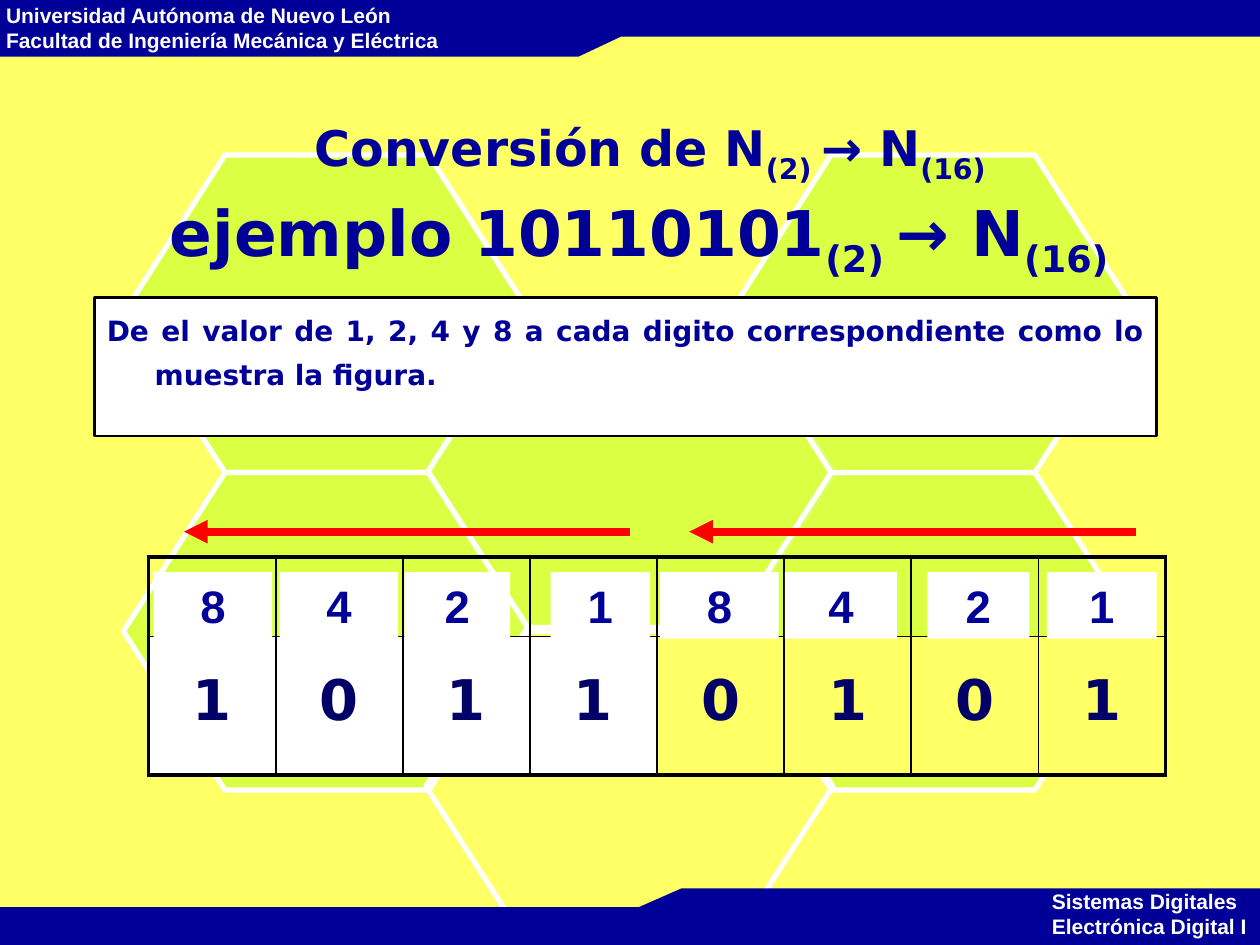
"""Build the slide on converting a binary number to hexadecimal."""
from lxml import etree
from pptx import Presentation
from pptx.dml.color import RGBColor
from pptx.enum.shapes import MSO_CONNECTOR, MSO_SHAPE
from pptx.enum.text import MSO_ANCHOR, PP_ALIGN
from pptx.oxml.ns import qn
from pptx.util import Inches, Pt

RECTANGLE, HEXAGON = MSO_SHAPE.RECTANGLE, MSO_SHAPE.HEXAGON
STRAIGHT = MSO_CONNECTOR.STRAIGHT
MIDDLE, TOP = MSO_ANCHOR.MIDDLE, MSO_ANCHOR.TOP
CENTER, LEFT, JUSTIFY = PP_ALIGN.CENTER, PP_ALIGN.LEFT, PP_ALIGN.JUSTIFY

COLORS = {"navy": "000099", "digit": "000066", "yellow": "FFFF66",
          "lime": "CCFF33", "white": "FFFFFF", "black": "000000", "red": "FF0000"}
HEADING_FONT, LABEL_FONT = "DejaVu Sans", "Arial"

HEADER_BAND = [(-0.01, 0.45), (-0.02, -0.03), (10, -0.02), (10, 0.29), (4.93, 0.29), (4.59, 0.45)]
FOOTER_BAND = [(10.01, 7.05), (10.02, 7.53), (0, 7.52), (0, 7.2), (5.07, 7.2), (5.41, 7.05)]
HEXAGONS = [(0.98, 1.23, "lime"), (3.39, 2.49, "lime"), (5.79, 3.75, "lime"),
            (5.79, 1.23, "lime"), (0.98, 3.75, "lime"), (3.38, 4.98, None)]
TITLE_LINES = [
    (28, [("Conversión de N", False), ("(2) ", True), ("→ N", False), ("(16)", True)]),
    (36, [("ejemplo 10110101", False), ("(2) ", True), ("→ N", False), ("(16)", True), (" ", False)]),
]
BITS = "10110101"
WEIGHTS = [("8", 1.22, 0.94), ("4", 2.22, 0.94), ("2", 3.21, 0.84), ("1", 4.37, 0.79),
           ("8", 5.24, 0.94), ("4", 6.23, 0.89), ("2", 7.36, 0.81), ("1", 8.31, 0.87)]


def rgb(name):
    """Return the named colour."""
    return RGBColor.from_string(COLORS[name])


def set_font(font, size, color, face):
    """Apply the bold style shared by all the text."""
    for attribute, value in {"size": Pt(size), "bold": True, "name": face}.items():
        setattr(font, attribute, value)
    font.color.rgb = rgb(color)


def paint(shape, fill=None, line=None, width=1):
    """Set fill and outline and drop the shadow."""
    shape.shadow.inherit = False
    if fill:
        shape.fill.solid()
        shape.fill.fore_color.rgb = rgb(fill)
    else:
        shape.fill.background()
    if line:
        shape.line.color.rgb = rgb(line)
        shape.line.width = Pt(width)
    else:
        shape.line.fill.background()


def write(frame, lines, size, color, face, align, spacing=1.0):
    """Write one paragraph per line."""
    for index, line in enumerate(lines):
        paragraph = frame.add_paragraph() if index else frame.paragraphs[0]
        paragraph.alignment = align
        paragraph.line_spacing = spacing
        run = paragraph.add_run()
        run.text = line
        set_font(run.font, size, color, face)


def add_band(slide, points):
    """Draw a stepped navy band."""
    corners = [(Inches(x), Inches(y)) for x, y in points]
    builder = slide.shapes.build_freeform(*corners[0])
    builder.add_line_segments(corners[1:], close=True)
    paint(builder.convert_to_shape(), "navy")


def add_band_label(slide, left, top, width, lines):
    """Place white text on a band."""
    label = slide.shapes.add_textbox(Inches(left), Inches(top), Inches(width), Inches(0.5))
    label.text_frame.word_wrap = False
    write(label.text_frame, lines, 12, "white", LABEL_FONT, LEFT)


def add_hexagon(slide, left, top, fill):
    """Draw one cell of the honeycomb."""
    cell = slide.shapes.add_shape(HEXAGON, Inches(left), Inches(top), Inches(3.23), Inches(2.52))
    cell.adjustments[0] = 0.32
    paint(cell, fill, "white", 3)
    if fill:
        color = cell.fill._xPr.find(qn("a:solidFill"))[0]
        etree.SubElement(color, qn("a:alpha"), val="70000")


def add_title(slide):
    """Fill the title placeholder and bring it in front of the honeycomb."""
    title = slide.shapes.title
    slide.shapes._spTree.append(title._element)
    title.left, title.top, title.width, title.height = map(Inches, (0.59, 0.84, 9.14, 1.42))
    title.text_frame.vertical_anchor = MIDDLE
    title.text_frame.word_wrap = True
    paragraph = title.text_frame.paragraphs[0]
    paragraph.alignment = CENTER
    paragraph.line_spacing = 1.1
    for index, (size, pieces) in enumerate(TITLE_LINES):
        if index:
            paragraph.add_line_break()
        for text, subscript in pieces:
            run = paragraph.add_run()
            run.text = text
            set_font(run.font, size, "navy", HEADING_FONT)
            if subscript:
                run.font._element.set("baseline", "-25000")


def add_box(slide, left, top, width, height, line=None):
    """Draw a white box and return its text frame."""
    box = slide.shapes.add_shape(RECTANGLE, *map(Inches, (left, top, width, height)))
    paint(box, "white", line, 1.5)
    box.text_frame.word_wrap = True
    box.text_frame.vertical_anchor = TOP
    return box.text_frame


def add_instruction(slide):
    """Add the framed instruction with a hanging indent."""
    frame = add_box(slide, 0.75, 2.36, 8.43, 1.1, "black")
    text = "De el valor de 1, 2, 4 y 8 a cada digito correspondiente como lo muestra la figura."
    write(frame, [text], 16, "navy", HEADING_FONT, JUSTIFY, 1.3)
    properties = frame.paragraphs[0]._p.get_or_add_pPr()
    properties.set("marL", str(Inches(0.38)))
    properties.set("indent", str(-Inches(0.38)))


def set_borders(cell, widths):
    """Give each side of a cell a black border."""
    for side, width in widths.items():
        border = etree.SubElement(cell._tc.get_or_add_tcPr(), qn(f"a:ln{side}"), w=str(Pt(width)))
        fill = etree.SubElement(border, qn("a:solidFill"))
        etree.SubElement(fill, qn("a:srgbClr"), val=COLORS["black"])


def add_bit_table(slide):
    """Add the table of bits, with each group of four in its own colour."""
    count = len(BITS)
    table = slide.shapes.add_table(2, count, *map(Inches, (1.18, 4.42, 8.07, 1.73))).table
    table.first_row = table.horz_banding = False
    for row, height in zip(table.rows, (0.63, 1.1)):
        row.height = Inches(height)
    for column, bit in enumerate(BITS):
        table.columns[column].width = Inches(8.07 / count)
        for row in range(2):
            cell = table.cell(row, column)
            set_borders(cell, {"L": 1 if column else 2.25,
                               "R": 2.25 if column == count - 1 else 1,
                               "T": 1 if row else 2.25,
                               "B": 2.25 if row else 1})
            if row:
                cell.fill.solid()
                cell.fill.fore_color.rgb = rgb("white" if column < 4 else "yellow")
                write(cell.text_frame, [bit], 32, "digit", HEADING_FONT, CENTER, 1.4)
            else:
                cell.fill.background()


def add_arrow(slide, start, end):
    """Draw a red arrow above a group of four bits."""
    arrow = slide.shapes.add_connector(STRAIGHT, *map(Inches, (start, 4.22, end, 4.22)))
    arrow.line.color.rgb = rgb("red")
    arrow.line.width = Pt(4.5)
    etree.SubElement(arrow.line._get_or_add_ln(), qn("a:tailEnd"), type="triangle")
    etree.SubElement(arrow._element.spPr, qn("a:effectLst"))


def main():
    """Build and save the slide."""
    deck = Presentation()
    deck.slide_width, deck.slide_height = Inches(10), Inches(7.5)
    slide = deck.slides.add_slide(deck.slide_layouts[5])
    slide.background.fill.solid()
    slide.background.fill.fore_color.rgb = rgb("yellow")
    add_band(slide, HEADER_BAND)
    add_band_label(slide, -0.05, -0.03, 3.64,
                   ["Universidad Autónoma de Nuevo León", "Facultad de Ingeniería Mecánica y Eléctrica"])
    for left, top, fill in HEXAGONS:
        add_hexagon(slide, left, top, fill)
    add_band(slide, FOOTER_BAND)
    add_band_label(slide, 8.25, 7, 1.75, ["Sistemas Digitales", "Electrónica Digital I"])
    add_title(slide)
    add_instruction(slide)
    add_bit_table(slide)
    for weight, left, width in WEIGHTS:
        write(add_box(slide, left, 4.54, width, 0.53), [weight], 26, "navy", LABEL_FONT, CENTER)
    for start, end in ((9.02, 5.47), (5, 1.46)):
        add_arrow(slide, start, end)
    deck.save("out.pptx")


if __name__ == "__main__":
    main()
